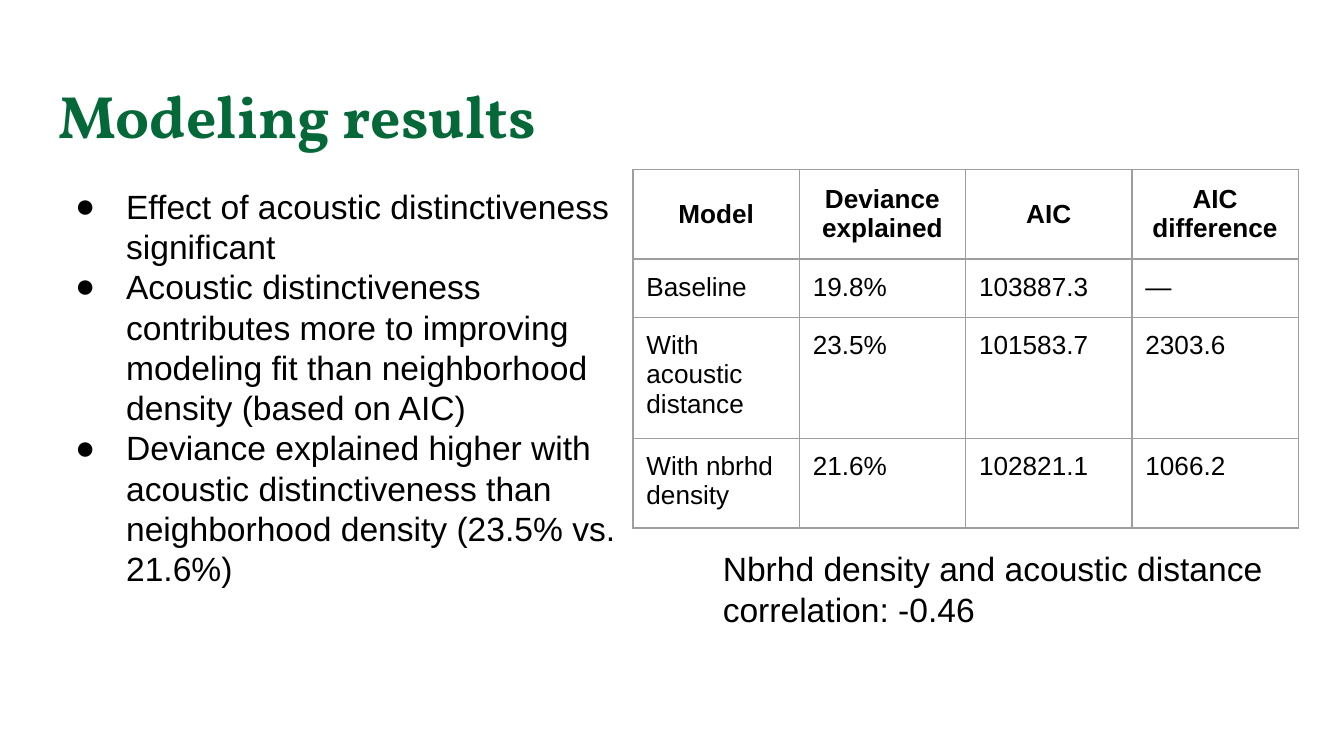
from lxml import etree
from pptx import Presentation
from pptx.dml.color import RGBColor
from pptx.enum.text import MSO_ANCHOR, PP_ALIGN
from pptx.oxml.ns import qn
from pptx.util import Inches, Pt

CENTER = PP_ALIGN.CENTER
LEFT = PP_ALIGN.LEFT
MIDDLE = MSO_ANCHOR.MIDDLE
TOP = MSO_ANCHOR.TOP
GREEN = RGBColor(0x05, 0x68, 0x39)
BLACK = RGBColor(0x00, 0x00, 0x00)
GRAY = RGBColor(0x9E, 0x9E, 0x9E)
INSET = Inches(0.1)


def style(paragraph, size, name="Arial", color=BLACK, bold=False):
    paragraph.font.size = Pt(size)
    paragraph.font.name = name
    paragraph.font.color.rgb = color
    paragraph.font.bold = bold


def add_text_frame(left, top, width, height):
    box = slide.shapes.add_textbox(Inches(left), Inches(top), Inches(width), Inches(height))
    frame = box.text_frame
    frame.word_wrap = True
    frame.margin_left = frame.margin_right = INSET
    frame.margin_top = frame.margin_bottom = INSET
    return frame


deck = Presentation()
deck.slide_width = Inches(10)
deck.slide_height = deck.slide_width * 9 // 16
slide = deck.slides.add_slide(deck.slide_layouts[6])

title = add_text_frame(0.34, 0.49, 9.32, 0.67).paragraphs[0]
title.text = "Modeling results"
style(title, 32, "Vollkorn", GREEN, True)

findings = [
    "Effect of acoustic distinctiveness significant",
    "Acoustic distinctiveness contributes more to improving modeling fit than "
    "neighborhood density (based on AIC)",
    "Deviance explained higher with acoustic distinctiveness than neighborhood "
    "density (23.5% vs. 21.6%)",
]
findings_frame = add_text_frame(0.34, 1.28, 4.37, 3.72)
for index, finding in enumerate(findings):
    para = findings_frame.paragraphs[0] if index == 0 else findings_frame.add_paragraph()
    para.text = finding
    properties = para._p.get_or_add_pPr()
    properties.set("marL", str(Inches(0.5)))
    properties.set("indent", str(Inches(-0.38)))
    bullet_color = etree.SubElement(properties, qn("a:buClr"))
    etree.SubElement(bullet_color, qn("a:srgbClr"), val=str(BLACK))
    etree.SubElement(properties, qn("a:buSzPts"), val="1800")
    etree.SubElement(properties, qn("a:buFont"), typeface="Arial")
    etree.SubElement(properties, qn("a:buChar"), char="●")
    style(para, 18)

note = add_text_frame(5.28, 3.98, 4.37, 1.02).paragraphs[0]
note.text = "Nbrhd density and acoustic distance correlation: -0.46"
style(note, 18)

rows = [
    ["Model", "Deviance explained", "AIC", "AIC difference"],
    ["Baseline", "19.8%", "103887.3", "—"],
    ["With acoustic distance", "23.5%", "101583.7", "2303.6"],
    ["With nbrhd density", "21.6%", "102821.1", "1066.2"],
]
table = slide.shapes.add_table(
    len(rows), len(rows[0]), Inches(4.71), Inches(1.26), Inches(4.95), Inches(0.42 * len(rows))
).table
for row_index, row in enumerate(rows):
    is_header = row_index == 0
    for column_index, value in enumerate(row):
        cell = table.cell(row_index, column_index)
        cell.text = value
        cell.margin_left = cell.margin_right = INSET
        cell.margin_top = cell.margin_bottom = INSET
        cell.vertical_anchor = MIDDLE if is_header else TOP
        para = cell.text_frame.paragraphs[0]
        para.alignment = CENTER if is_header else LEFT
        style(para, 14, bold=is_header)
        for side in ("a:lnL", "a:lnR", "a:lnT", "a:lnB"):
            border = etree.SubElement(cell._tc.get_or_add_tcPr(), qn(side), w=str(Pt(0.75)))
            border_fill = etree.SubElement(border, qn("a:solidFill"))
            etree.SubElement(border_fill, qn("a:srgbClr"), val=str(GRAY))
        cell.fill.background()

deck.save("out.pptx")
